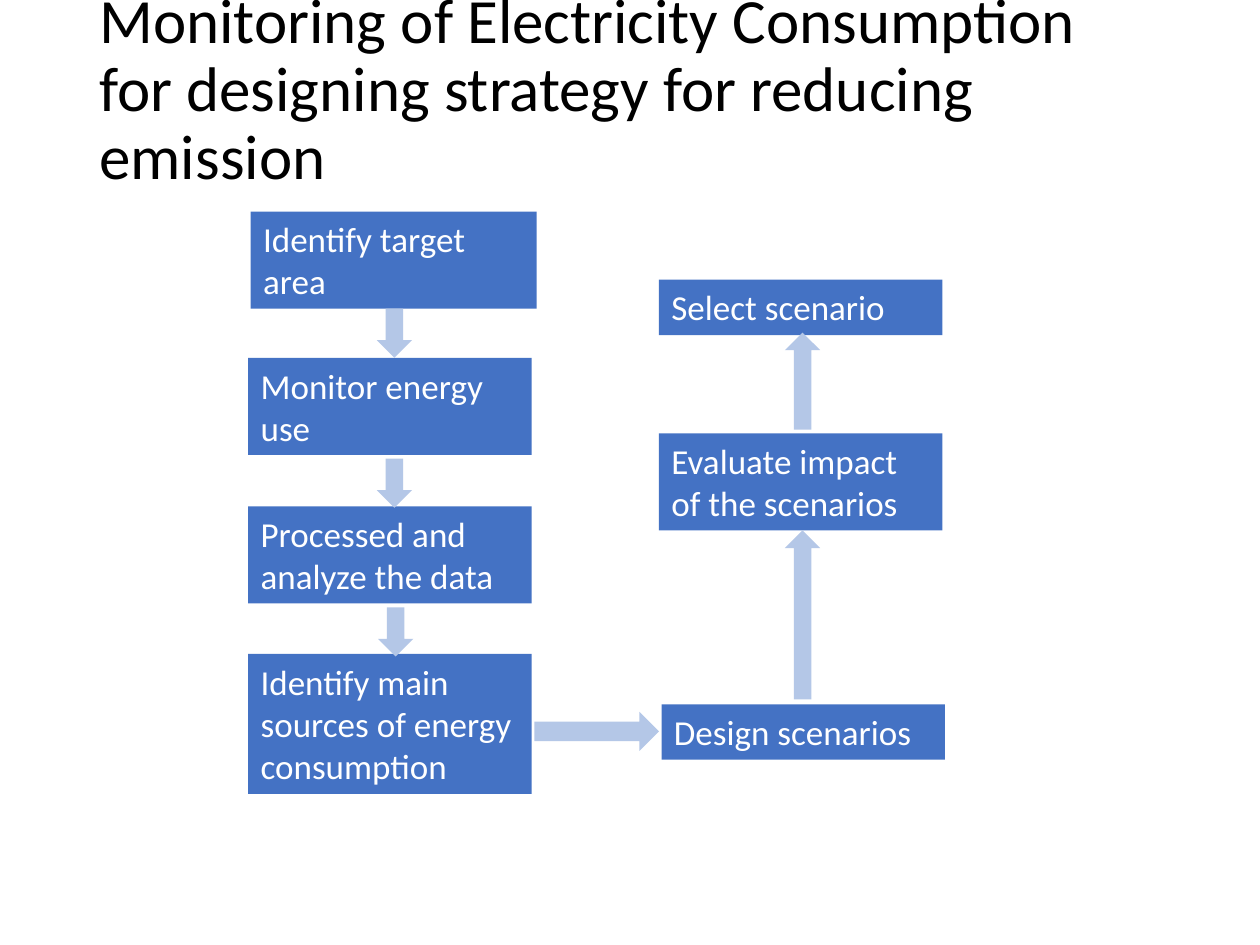
import pptx
import pptx.util
import pptx.dml.color
import pptx.enum.shapes
import pptx.enum.text

Inches = pptx.util.Inches
RGBColor = pptx.dml.color.RGBColor
SHAPE = pptx.enum.shapes.MSO_SHAPE
ANCHOR = pptx.enum.text.MSO_ANCHOR
ALIGN = pptx.enum.text.PP_ALIGN

BLACK = RGBColor(0x00, 0x00, 0x00)
WHITE = RGBColor(0xFF, 0xFF, 0xFF)
STEP_BLUE = RGBColor(0x44, 0x72, 0xC4)
ARROW_BLUE = RGBColor(0xB4, 0xC7, 0xE7)

TITLE = "Monitoring of Electricity Consumption for designing strategy for reducing emission"

STEP_WIDTH = 2.25
STEP_HEIGHTS = {1: 0.44, 2: 0.77, 3: 1.11}  # by number of text lines
# text, left, top, number of text lines, extra width
STEPS = [
    ("Identify target area", 1.99, 1.68, 2, 0.02),
    ("Monitor energy use", 1.97, 2.84, 2, 0),
    ("Processed and analyze the data", 1.97, 4.02, 2, 0),
    ("Identify main sources of energy consumption", 1.97, 5.19, 3, 0),
    ("Evaluate impact of the scenarios", 5.23, 3.44, 2, 0),
    ("Design scenarios", 5.25, 5.59, 1, 0),
    ("Select scenario", 5.23, 2.22, 1, 0),
]

# shape, left, top, width, height
ARROWS = [
    (SHAPE.DOWN_ARROW, 2.99, 2.45, 0.28, 0.39),
    (SHAPE.DOWN_ARROW, 2.99, 3.64, 0.28, 0.39),
    (SHAPE.DOWN_ARROW, 3.0, 4.82, 0.28, 0.39),
    (SHAPE.RIGHT_ARROW, 4.24, 5.65, 0.99, 0.31),
    (SHAPE.UP_ARROW, 6.23, 4.21, 0.28, 1.34),
    (SHAPE.UP_ARROW, 6.23, 2.64, 0.28, 0.77),
]


def write_text(box, text, *, size, color, anchor=ANCHOR.TOP, line_spacing=1.0):
    frame = box.text_frame
    frame.word_wrap = True
    frame.vertical_anchor = anchor
    para = frame.paragraphs[0]
    para.alignment = ALIGN.LEFT
    para.line_spacing = line_spacing
    span = para.add_run()
    span.text = text
    span.font.name = "Calibri"
    span.font.size = pptx.util.Pt(size)
    span.font.color.rgb = color


def add_filled(page, kind, left, top, width, height, color):
    shape = page.shapes.add_shape(
        kind, Inches(left), Inches(top), Inches(width), Inches(height))
    shape.shadow.inherit = False
    shape.fill.solid()
    shape.fill.fore_color.rgb = color
    shape.line.fill.background()
    return shape


def main():
    deck = pptx.Presentation()
    deck.slide_width, deck.slide_height = Inches(10), Inches(7.5)
    page = deck.slides.add_slide(deck.slide_layouts[6])

    title = page.shapes.add_textbox(
        Inches(0.69), Inches(0.15), Inches(8.62), Inches(1.15))
    write_text(title, TITLE, size=36, color=BLACK,
               anchor=ANCHOR.MIDDLE, line_spacing=0.9)

    for text, left, top, lines, extra in STEPS:
        step = add_filled(page, SHAPE.RECTANGLE, left, top,
                          STEP_WIDTH + extra, STEP_HEIGHTS[lines], STEP_BLUE)
        write_text(step, text, size=20, color=WHITE)

    for kind, left, top, width, height in ARROWS:
        add_filled(page, kind, left, top, width, height, ARROW_BLUE)

    deck.save("out.pptx")


if __name__ == "__main__":
    main()
